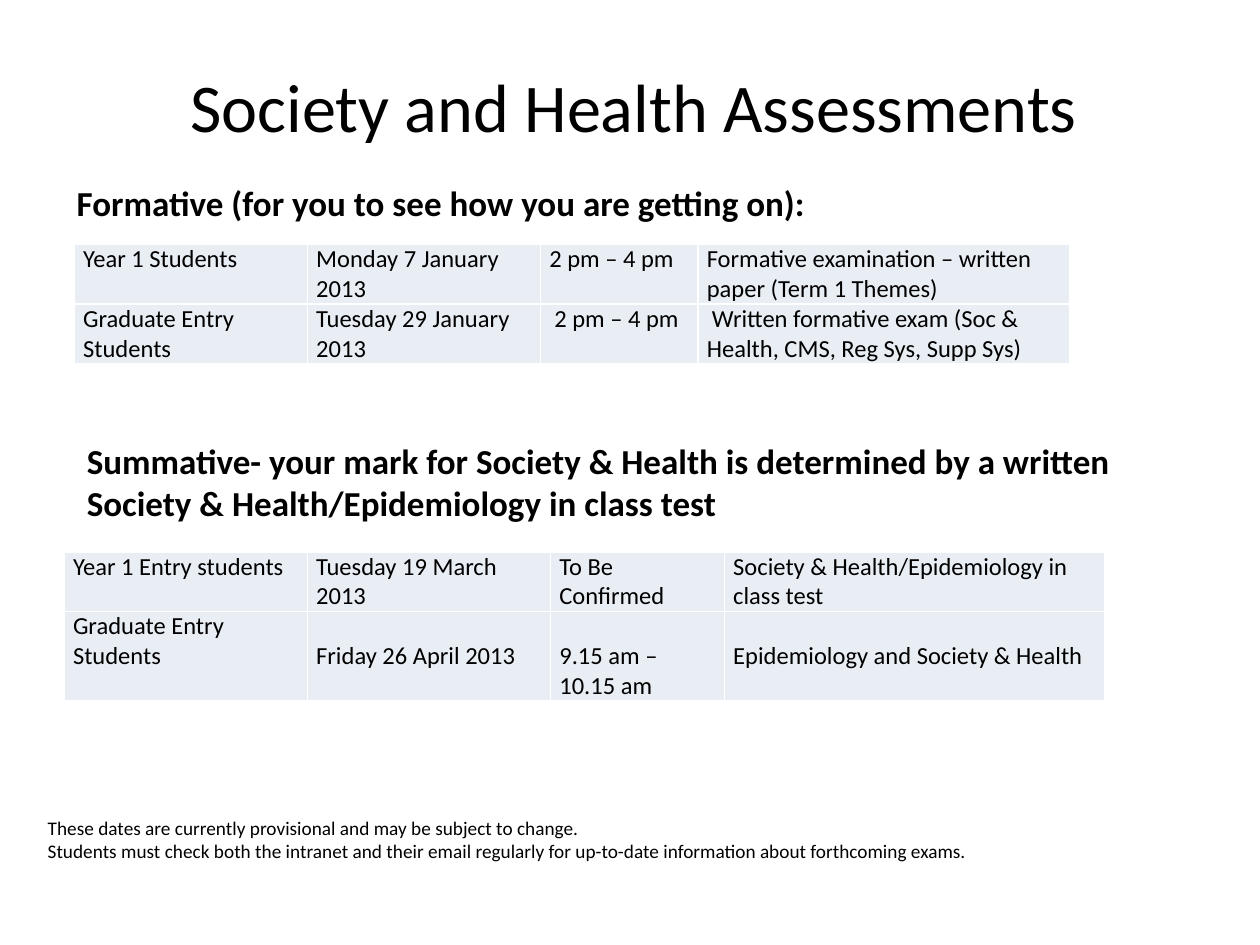
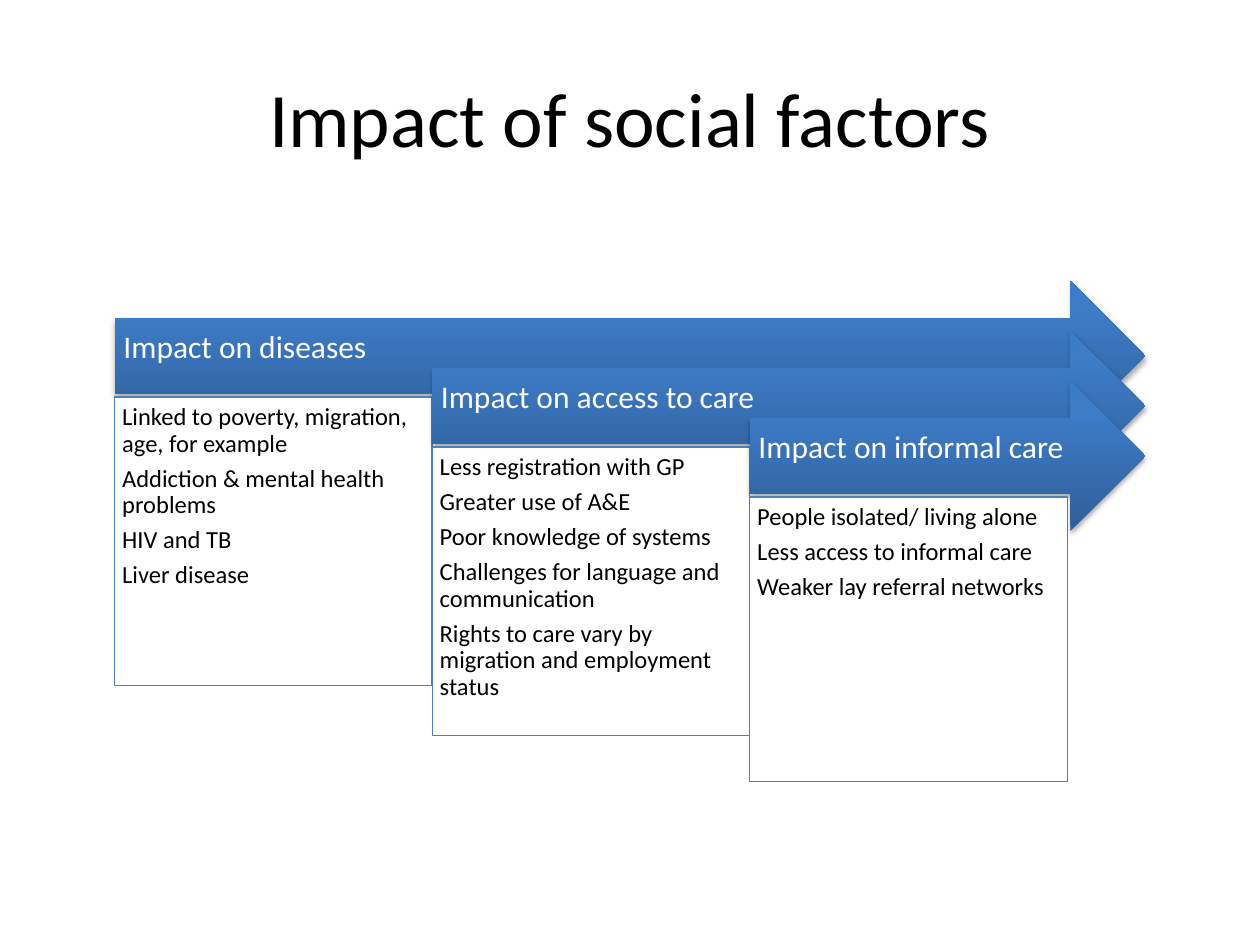
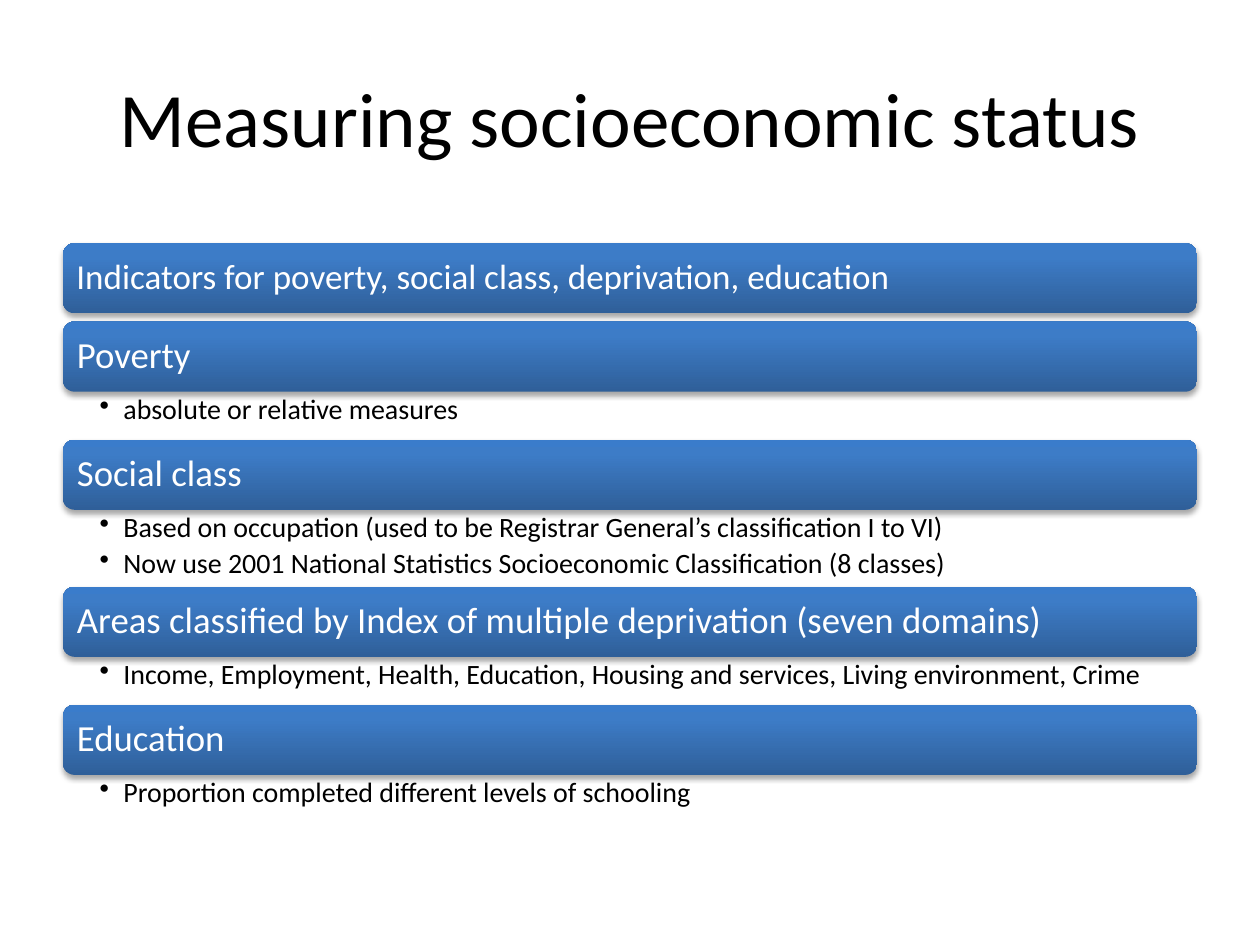
from copy import deepcopy

from pptx import Presentation
from pptx.dml.color import RGBColor
from pptx.enum.shapes import MSO_SHAPE
from pptx.enum.text import MSO_ANCHOR, MSO_AUTO_SIZE, PP_ALIGN
from pptx.oxml import parse_xml
from pptx.oxml.ns import nsdecls, qn
from pptx.util import Emu, Inches, Pt

COLORS = {
    "text": "000000",
    "light": "FFFFFF",
    "cell": "E9EDF4",
    "outline": "4F81BD",
    "shadow": "000000",
}
BAND_STOPS = [(0, "2F5F99"), (0.8, "3D7CC7"), (1, "3A7CCB")]
FONT = "Calibri"

# Grid of 100 columns by 75 rows over the slide
COLUMNS, ROWS = 100, 75
UNIT = Inches(10) // COLUMNS
TITLE_BOX = (5, 3, 90, 12.5)
LINE = 2.37  # one line of table text

FORMATIVE = [
    ["Year 1 Students", "Monday 7 January 2013", "2 pm – 4 pm",
     "Formative examination – written paper (Term 1 Themes)"],
    ["Graduate Entry Students", "Tuesday 29 January 2013", "2 pm – 4 pm",
     "Written formative exam (Soc & Health, CMS, Reg Sys, Supp Sys)"],
]
SUMMATIVE = [
    ["Year 1 Entry students", "Tuesday 19 March 2013", "To Be Confirmed",
     "Society & Health/Epidemiology in class test"],
    ["Graduate Entry Students", "Friday 26 April 2013", "9.15 am – 10.15 am",
     "Epidemiology and Society & Health"],
]
IMPACTS = [
    ("Impact on diseases", 22.9,
     ["Linked to poverty, migration, age, for example",
      "Addiction & mental health problems", "HIV and TB", "Liver disease"]),
    ("Impact on access to care", 22.9,
     ["Less registration with GP", "Greater use of A&E",
      "Poor knowledge of systems",
      "Challenges for language and communication",
      "Rights to care vary by migration and employment status"]),
    ("Impact on informal care", 22.6,
     ["People isolated/ living alone", "Less access to informal care",
      "Weaker lay referral networks"]),
]
MEASURES = [
    ("Indicators for poverty, social class, deprivation, education", 20, []),
    ("Poverty", 21, ["absolute or relative measures"]),
    ("Social class", 21,
     ["Based on occupation (used to be Registrar General’s classification I to VI)",
      "Now use 2001 National Statistics Socioeconomic Classification (8 classes)"]),
    ("Areas classified by Index of multiple deprivation (seven domains)", 21,
     ["Income, Employment, Health, Education, Housing and services, "
      "Living environment, Crime"]),
    ("Education", 21, ["Proportion completed different levels of schooling"]),
]


def grid(*lengths):
    return [Emu(round(length * UNIT)) for length in lengths]


def rgb(name):
    return RGBColor.from_string(COLORS[name])


def write(frame, lines, size, color="text", bold=False, align=PP_ALIGN.LEFT,
          anchor=MSO_ANCHOR.TOP, margins=None, line_spacing=None, gap=0):
    """Fill a text frame; gap is the space after, as a share of the text size."""
    frame.text = "\n".join(lines)
    frame.word_wrap = True
    frame.auto_size = MSO_AUTO_SIZE.NONE
    frame.vertical_anchor = anchor
    if margins:
        (frame.margin_left, frame.margin_top,
         frame.margin_right, frame.margin_bottom) = grid(*margins)
    for paragraph in frame.paragraphs:
        paragraph.alignment = align
        paragraph.line_spacing = line_spacing
        paragraph.space_after = Pt(size * gap)
        format_runs(paragraph, size, color, bold)


def format_runs(paragraph, size, color="text", bold=False):
    for run in paragraph.runs:
        run.font.name = FONT
        run.font.size = Pt(size)
        run.font.bold = bold
        run.font.color.rgb = rgb(color)


def add_titled_slide(prs, title, size=44, box=TITLE_BOX):
    slide = prs.slides.add_slide(prs.slide_layouts[5])
    heading = slide.shapes.title
    heading.left, heading.top, heading.width, heading.height = grid(*box)
    write(heading.text_frame, [title], size, align=PP_ALIGN.CENTER,
          anchor=MSO_ANCHOR.MIDDLE)
    return slide


def add_text(slide, box, lines, size, **style):
    textbox = slide.shapes.add_textbox(*grid(*box))
    write(textbox.text_frame, lines, size, **style)
    return textbox.text_frame


def add_band(slide, preset, box, label, size, margins):
    """Blue gradient shape with a soft shadow and a white label."""
    band = slide.shapes.add_shape(preset, *grid(*box))
    band.fill.gradient()
    band.fill.gradient_angle = 90
    properties = band.fill._xPr
    stops = properties.find(".//" + qn("a:gsLst"))
    stops.append(deepcopy(stops[0]))
    for stop, (position, color) in zip(band.fill.gradient_stops, BAND_STOPS):
        stop.position = position
        stop.color.rgb = RGBColor.from_string(color)
    band.line.fill.background()
    band.shadow.inherit = False
    properties.find(qn("a:effectLst")).append(parse_xml(
        f'<a:outerShdw {nsdecls("a")} blurRad="{Pt(3.1)}" dist="{Pt(1.8)}" '
        f'dir="5400000" rotWithShape="0"><a:srgbClr val="{COLORS["shadow"]}">'
        '<a:alpha val="35000"/></a:srgbClr></a:outerShdw>'))
    write(band.text_frame, [label], size, color="light",
          anchor=MSO_ANCHOR.MIDDLE, margins=margins, line_spacing=0.9)


def add_panel(slide, box, lines):
    panel = slide.shapes.add_shape(MSO_SHAPE.RECTANGLE, *grid(*box))
    panel.shadow.inherit = False
    panel.fill.solid()
    panel.fill.fore_color.rgb = rgb("light")
    panel.line.color.rgb = rgb("outline")
    panel.line.width = Pt(0.75)
    write(panel.text_frame, lines, 14, margins=[0.6] * 4,
          line_spacing=0.9, gap=0.35)


def add_bullets(slide, box, lines):
    frame = add_text(slide, box, lines, 16, margins=(2.9, 0.3, 1.6, 0.3),
                     line_spacing=0.9, gap=0.2)
    indent = grid(1.9)[0]
    for paragraph in frame.paragraphs:
        properties = paragraph._p.get_or_add_pPr()
        properties.set("marL", str(indent))
        properties.set("indent", str(-indent))
        properties.append(parse_xml(f'<a:buChar {nsdecls("a")} char="•"/>'))


def format_cell(cell, text):
    cell.text_frame.text = text
    format_runs(cell.text_frame.paragraphs[0], 14)
    cell.margin_left = cell.margin_right = grid(0.7)[0]
    cell.margin_top = cell.margin_bottom = 0
    properties = cell._tc.get_or_add_tcPr()
    for side in ("lnL", "lnR", "lnT", "lnB"):
        properties.append(parse_xml(
            f'<a:{side} {nsdecls("a")} w="{Pt(1)}"><a:solidFill>'
            f'<a:srgbClr val="{COLORS["light"]}"/></a:solidFill></a:{side}>'))
    cell.fill.solid()
    cell.fill.fore_color.rgb = rgb("cell")


def add_schedule(slide, left, top, widths, heights, entries):
    frame = slide.shapes.add_table(
        len(heights), len(widths), *grid(left, top, sum(widths), sum(heights)))
    schedule = frame.table
    schedule.first_row = schedule.horz_banding = False
    for column, width in zip(schedule.columns, grid(*widths)):
        column.width = width
    for row, height, texts in zip(schedule.rows, grid(*heights), entries):
        row.height = height
        for cell, text in zip(row.cells, texts):
            format_cell(cell, text)
    return schedule


def build_assessments(prs):
    slide = add_titled_slide(prs, "Society and Health Assessments", 39,
                             (5.3, 2.1, 90, 12.5))
    formative = add_schedule(slide, 5.9, 19.4, (18.5, 18.5, 12.5, 29.5),
                             (2 * LINE, 2 * LINE), FORMATIVE)
    # Slight first-line indent for the graduate time and exam
    for column in (2, 3):
        paragraph = formative.cell(1, column).text_frame.paragraphs[0]
        paragraph._p.get_or_add_pPr().set("indent", str(grid(0.4)[0]))

    summative = add_schedule(slide, 5.1, 43.8, (19.3, 19.3, 13.8, 30.2),
                             (2 * LINE, 3 * LINE), SUMMATIVE)
    # Graduate details start one line lower than the group name
    for column in (1, 2, 3):
        summative.cell(1, column).margin_top = grid(LINE)[0]

    add_text(slide, (5.1, 13.9, 68.5, 7.7),
             ["Formative (for you to see how you are getting on):"], 20, bold=True)
    add_text(slide, (5.9, 34.4, 85.8, 11.1),
             ["Summative- your mark for Society & Health is determined by a "
              "written Society & Health/Epidemiology in class test"], 20, bold=True)
    add_text(slide, (2.8, 64.3, 94.5, 6.6),
             ["These dates are currently provisional and may be subject to change.",
              "Students must check both the intranet and their email regularly for "
              "up-to-date information about forthcoming exams."], 11)


def build_impacts(prs):
    slide = add_titled_slide(prs, "Impact of social factors")
    first_left, first_top, right = 9.1, 22.3, 90.9
    panel_width, step_down, arrow_height, panel_drop = 25.2, 3.97, 11.9, 9.2
    for step, (label, panel_height, lines) in enumerate(IMPACTS):
        left = first_left + step * panel_width
        top = first_top + step * step_down
        add_band(slide, MSO_SHAPE.RIGHT_ARROW,
                 (left, top, right - left, arrow_height),
                 label, 18, (0.7, 0.7, 2.8, 1.9))
        add_panel(slide, (left, top + panel_drop, panel_width, panel_height), lines)


def build_measures(prs):
    slide = add_titled_slide(prs, "Measuring socioeconomic status")
    left, top, width, bar_height, bar_gap = 5, 19.3, 90, 5.57, 0.65
    for label, size, lines in MEASURES:
        add_band(slide, MSO_SHAPE.ROUNDED_RECTANGLE,
                 (left, top, width, bar_height), label, size, [size * 0.04] * 4)
        top += bar_height
        if not lines:
            top += bar_gap
            continue
        list_height = 1.5 + 2.3 * len(lines)
        add_bullets(slide, (left, top, width, list_height), lines)
        top += list_height


def main():
    prs = Presentation()
    prs.slide_width, prs.slide_height = grid(COLUMNS, ROWS)
    build_assessments(prs)
    build_impacts(prs)
    build_measures(prs)
    prs.save("out.pptx")


if __name__ == "__main__":
    main()
